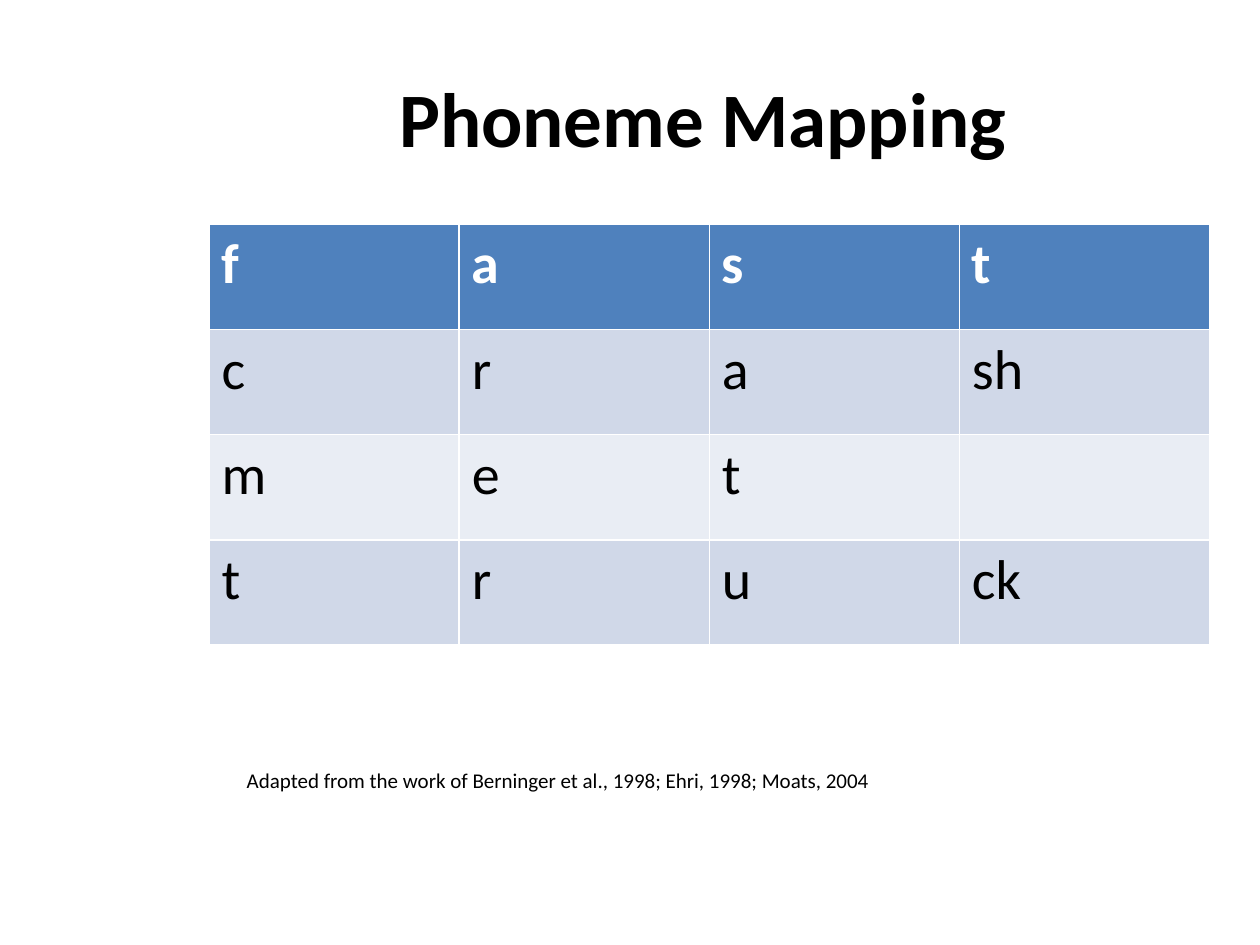
"""Build the Phoneme Mapping slide: a title, a grid of sounds and a credit line."""
from pptx import Presentation
from pptx.dml.color import RGBColor
from pptx.enum.text import MSO_ANCHOR, PP_ALIGN
from pptx.util import Inches, Pt

TITLE = "Phoneme Mapping"
WORDS = [
    ["f", "a", "s", "t"],
    ["c", "r", "a", "sh"],
    ["m", "e", "t", ""],
    ["t", "r", "u", "ck"],
]
CREDIT = "Adapted from the work of Berninger et al., 1998; Ehri, 1998; Moats, 2004"

FONT = "Calibri"
BLACK = RGBColor(0x00, 0x00, 0x00)
WHITE = RGBColor(0xFF, 0xFF, 0xFF)
BLUE = RGBColor(0x4F, 0x81, 0xBD)
BANDS = [RGBColor(0xE9, 0xED, 0xF4), RGBColor(0xD0, 0xD8, 0xE8)]

WIDE, HIGH = Inches(10), Inches(7.5)
LEFT = Inches(1.66)


def style(para, size, color=BLACK, bold=False):
    font = para.font
    font.name, font.size, font.bold = FONT, Pt(size), bold
    font.color.rgb = color


def add_text(slide, text, box, size, bold=False, wrap=True):
    frame = slide.shapes.add_textbox(*box).text_frame
    frame.word_wrap = wrap
    frame.text = text
    style(frame.paragraphs[0], size, bold=bold)
    return frame


def add_grid(slide):
    rows, cols = len(WORDS), len(WORDS[0])
    size = Inches(7.94), Inches(3.34)
    table = slide.shapes.add_table(rows, cols, LEFT, Inches(1.78), *size).table
    for row, sounds in enumerate(WORDS):
        head = row == 0
        for col, sound in enumerate(sounds):
            cell = table.cell(row, col)
            cell.text = sound
            cell.fill.solid()
            cell.fill.fore_color.rgb = BLUE if head else BANDS[row % 2]
            para = cell.text_frame.paragraphs[0]
            style(para, 32, WHITE if head else BLACK, head)


def main():
    deck = Presentation()
    deck.slide_width, deck.slide_height = WIDE, HIGH
    slide = deck.slides.add_slide(deck.slide_layouts[6])

    box = LEFT, Inches(0.3), Inches(7.84), Inches(1.25)
    title = add_text(slide, TITLE, box, 44, bold=True)
    title.vertical_anchor = MSO_ANCHOR.MIDDLE
    title.paragraphs[0].alignment = PP_ALIGN.CENTER

    add_grid(slide)

    box = LEFT + Inches(0.2), Inches(6.04), Inches(5.21), Inches(0.3)
    add_text(slide, CREDIT, box, 12, wrap=False)

    deck.save("out.pptx")


if __name__ == "__main__":
    main()
